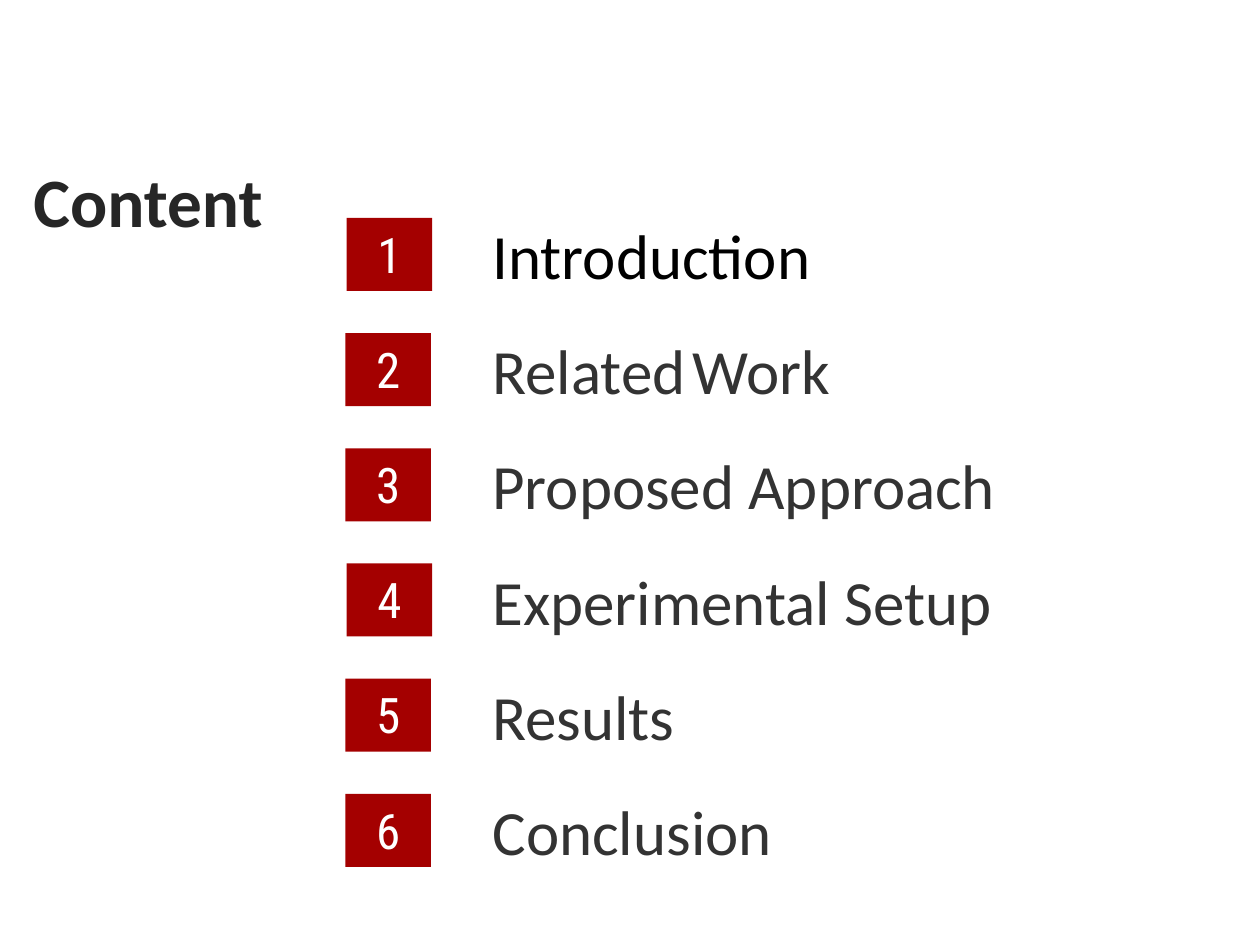
"""Build the agenda slide with six numbered sections."""
from pptx import Presentation
from pptx.dml.color import RGBColor
from pptx.enum.shapes import MSO_SHAPE
from pptx.enum.text import MSO_ANCHOR, PP_ALIGN
from pptx.util import Inches, Pt


def rgb(value):
    return RGBColor.from_string(value)


def add_run(p, text, color, **fmt):
    r = p.add_run()
    r.text = text
    r.font.color.rgb = rgb(color)
    for name, value in fmt.items():
        setattr(r.font, name, value)


prs = Presentation()
prs.slide_width, prs.slide_height = Inches(10), Inches(7.5)
s = prs.slides.add_slide(prs.slide_layouts[5])

title = s.shapes.title
title.left, title.top = Inches(-0.02), Inches(0.94)
title.width, title.height = Inches(2.39), Inches(1.37)
tf = title.text_frame
tf.vertical_anchor = MSO_ANCHOR.MIDDLE
p = tf.paragraphs[0]
p.alignment = PP_ALIGN.CENTER
p.line_spacing = 0.9
add_run(p, "Content", "262626", name="Calibri", size=Pt(39.6), bold=True)

sections = [
    (["Introduction"], 2.75),
    (["Related", " ", "Work"], 3.4),
    (["Proposed Approach"], 4.33),
    (["Experimental Setup"], 4.2),
    (["Results"], 1.66),
    (["Conclusion"], 2.49),
]
first_top, last_top = 1.73, 6.3
pitch = (last_top - first_top) / (len(sections) - 1)
body = {"name": "Calibri", "size": Pt(36), "bold": False}
gap = {"name": "Cabin", "size": Pt(18), "bold": True}

for i, (words, width) in enumerate(sections):
    top = first_top + i * pitch
    left = 2.75 if i % 3 == 0 else 2.74
    sp = s.shapes.add_shape(MSO_SHAPE.RECTANGLE, Inches(left), Inches(top),
                            Inches(0.68), Inches(0.58))
    sp.shadow.inherit = False
    sp.fill.solid()
    sp.fill.fore_color.rgb = rgb("A40000")
    sp.line.fill.background()
    sp.text_frame.vertical_anchor = MSO_ANCHOR.TOP
    p = sp.text_frame.paragraphs[0]
    p.alignment = PP_ALIGN.CENTER
    add_run(p, str(i + 1), "FFFFFF", name="Roboto Condensed", size=Pt(28))

    box = s.shapes.add_textbox(Inches(3.81), Inches(top - 0.06),
                               Inches(width), Inches(0.71))
    tf = box.text_frame
    tf.word_wrap = len(words) > 1
    color = "000000" if i == 0 else "333333"
    for word in words:
        add_run(tf.paragraphs[0], word, color, **(gap if word == " " else body))

prs.save("out.pptx")
